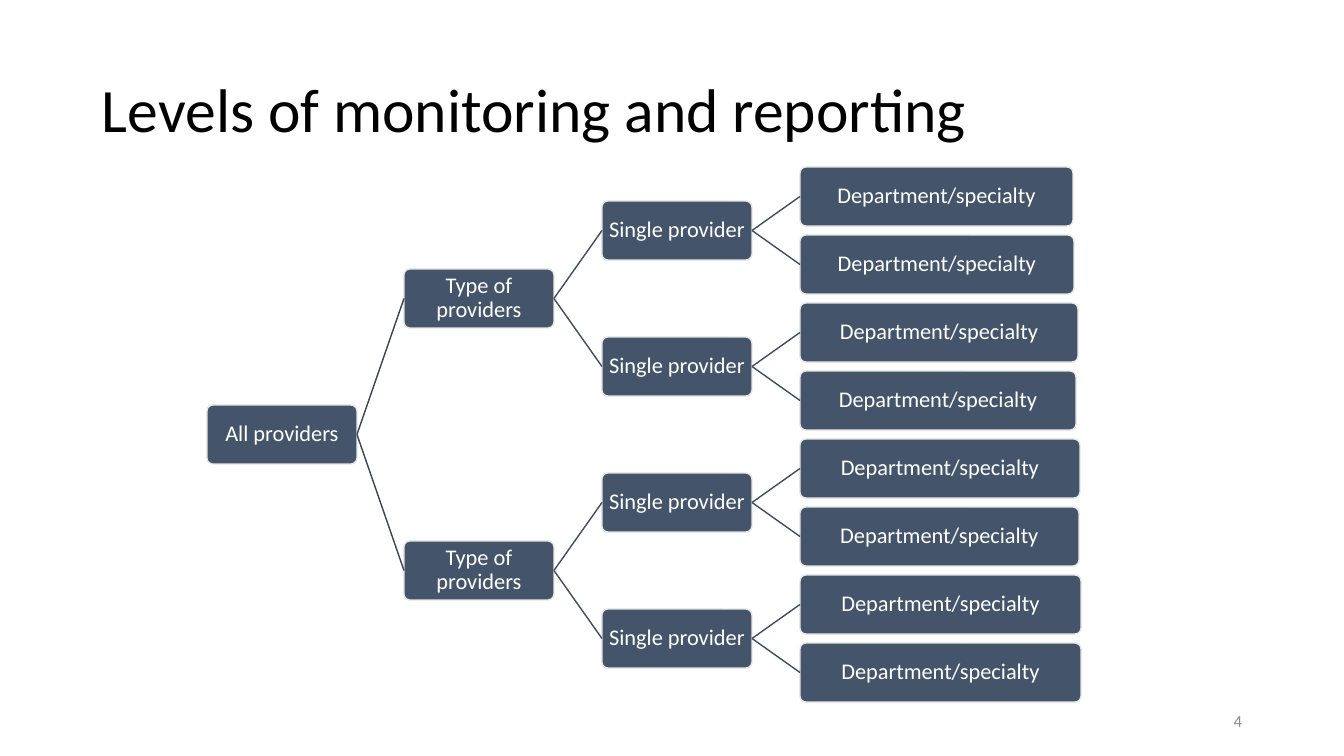
from lxml.etree import SubElement
from pptx import Presentation
from pptx.dml.color import RGBColor
from pptx.enum.shapes import MSO_CONNECTOR, MSO_SHAPE
from pptx.enum.text import MSO_ANCHOR as Anchor, PP_ALIGN as Align
from pptx.oxml.ns import qn
from pptx.util import Emu, Pt

PX = 914400 / 100.8
FONT = "Calibri"
BLACK = RGBColor(0x00, 0x00, 0x00)
WHITE = RGBColor(0xFF, 0xFF, 0xFF)
GRAY = RGBColor(0x8C, 0x8C, 0x8C)
SLATE = RGBColor(0x44, 0x54, 0x6A)
BORDER = RGBColor(0xE7, 0xE6, 0xE6)
TRUNK = RGBColor(0x36, 0x43, 0x55)
BRANCH = RGBColor(0x3E, 0x4C, 0x60)

LEVELS = ["All providers", "Type of providers", "Single provider", "Department/specialty"]
COLUMNS = [207, 404, 602, 800]
DEPARTMENT_WIDTHS = [273, 274, 278, 276, 280, 279, 281, 281]
LAST = len(LEVELS) - 1
TOP, PITCH = 167, 68
BOX_W, BOX_H = 150, 59


def px(n):
    return Emu(round(n * PX))


def set_text(shape, text, size, color, align, spacing=1.0):
    tf = shape.text_frame
    tf.word_wrap = True
    tf.vertical_anchor = Anchor.MIDDLE
    p = tf.paragraphs[0]
    p.text = text
    p.alignment = align
    p.line_spacing = spacing
    p.font.name = FONT
    p.font.size = Pt(size)
    p.font.color.rgb = color


def add_text(s, x, y, w, h, *style):
    set_text(s.shapes.add_textbox(px(x), px(y), px(w), px(h)), *style)


def add_box(s, x, y, w, text):
    box = s.shapes.add_shape(MSO_SHAPE.ROUNDED_RECTANGLE, px(x), px(y), px(w), px(BOX_H))
    box.adjustments[0] = 0.1
    box.shadow.inherit = False
    box.fill.solid()
    box.fill.fore_color.rgb = SLATE
    box.line.color.rgb = BORDER
    box.line.width = Pt(1)
    tf = box.text_frame
    tf.margin_left = tf.margin_right = tf.margin_top = tf.margin_bottom = px(1)
    set_text(box, text, 16, WHITE, Align.CENTER, 0.9)
    return box


def add_link(s, parent, child, color):
    link = s.shapes.add_connector(MSO_CONNECTOR.STRAIGHT, 0, 0, 0, 0)
    link.begin_connect(parent, 3)
    link.end_connect(child, 1)
    link.line.color.rgb = color
    link.line.width = Pt(1)
    SubElement(link._element.spPr, qn("a:effectLst"))


def add_branch(s, level=0, index=0, parent=None):
    """Draw a box centred on the rows it spans, then its two branches."""
    rows = 2 ** (LAST - level)
    y = TOP + PITCH * index * rows + PITCH * (rows - 1) // 2
    w = DEPARTMENT_WIDTHS[index] if level == LAST else BOX_W
    box = add_box(s, COLUMNS[level], y, w, LEVELS[level])
    if parent is not None:
        add_link(s, parent, box, TRUNK if level == 1 else BRANCH)
    if level < LAST:
        for child in (2 * index, 2 * index + 1):
            add_branch(s, level + 1, child, box)


def main():
    prs = Presentation()
    prs.slide_width, prs.slide_height = px(1344), px(756)
    s = prs.slides.add_slide(prs.slide_layouts[6])
    add_text(s, 92, 40, 1159, 146, "Levels of monitoring and reporting", 44, BLACK, Align.LEFT, 0.9)
    add_branch(s)
    add_text(s, 950, 701, 302, 40, "4", 12, GRAY, Align.RIGHT)
    prs.save("out.pptx")


if __name__ == "__main__":
    main()
